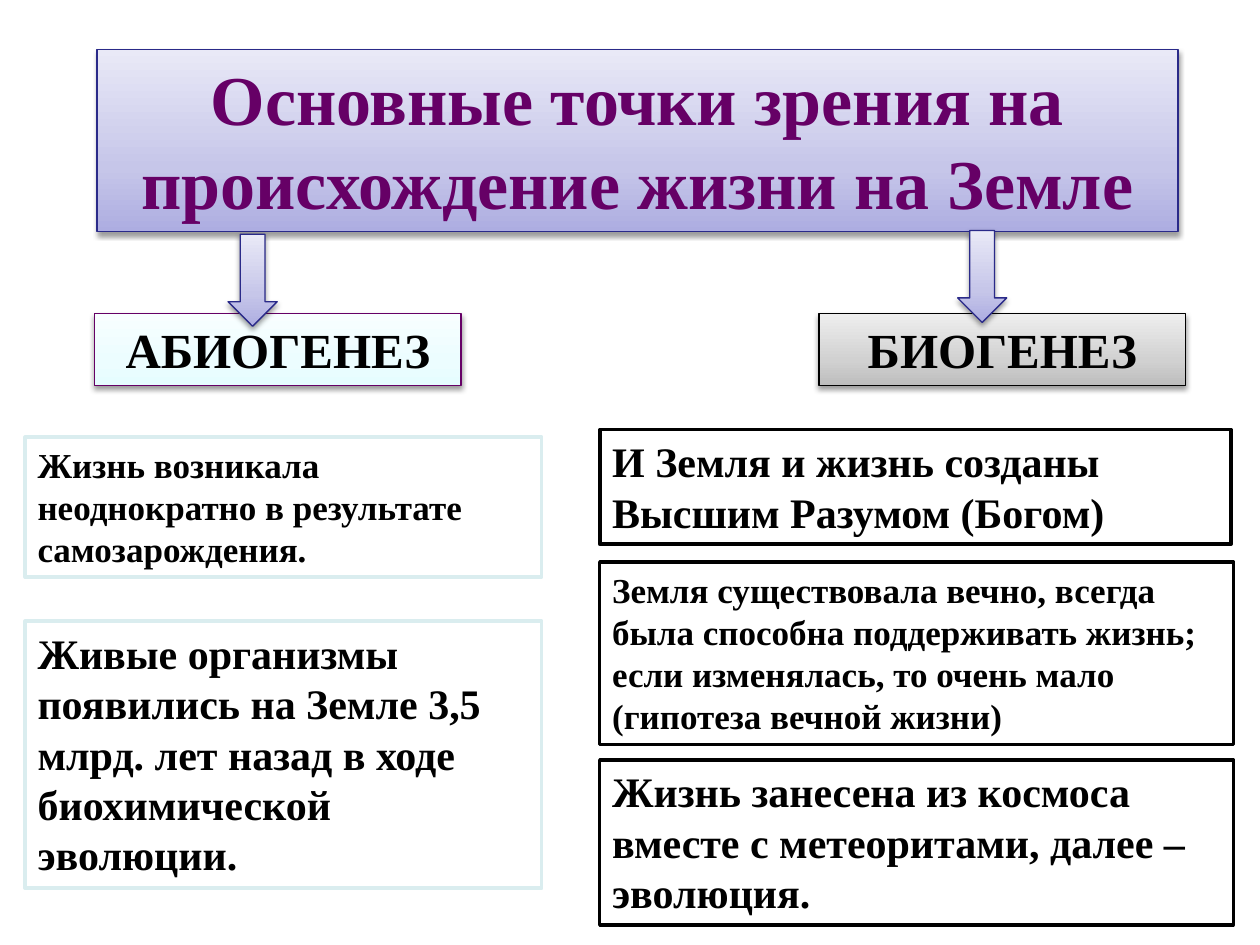
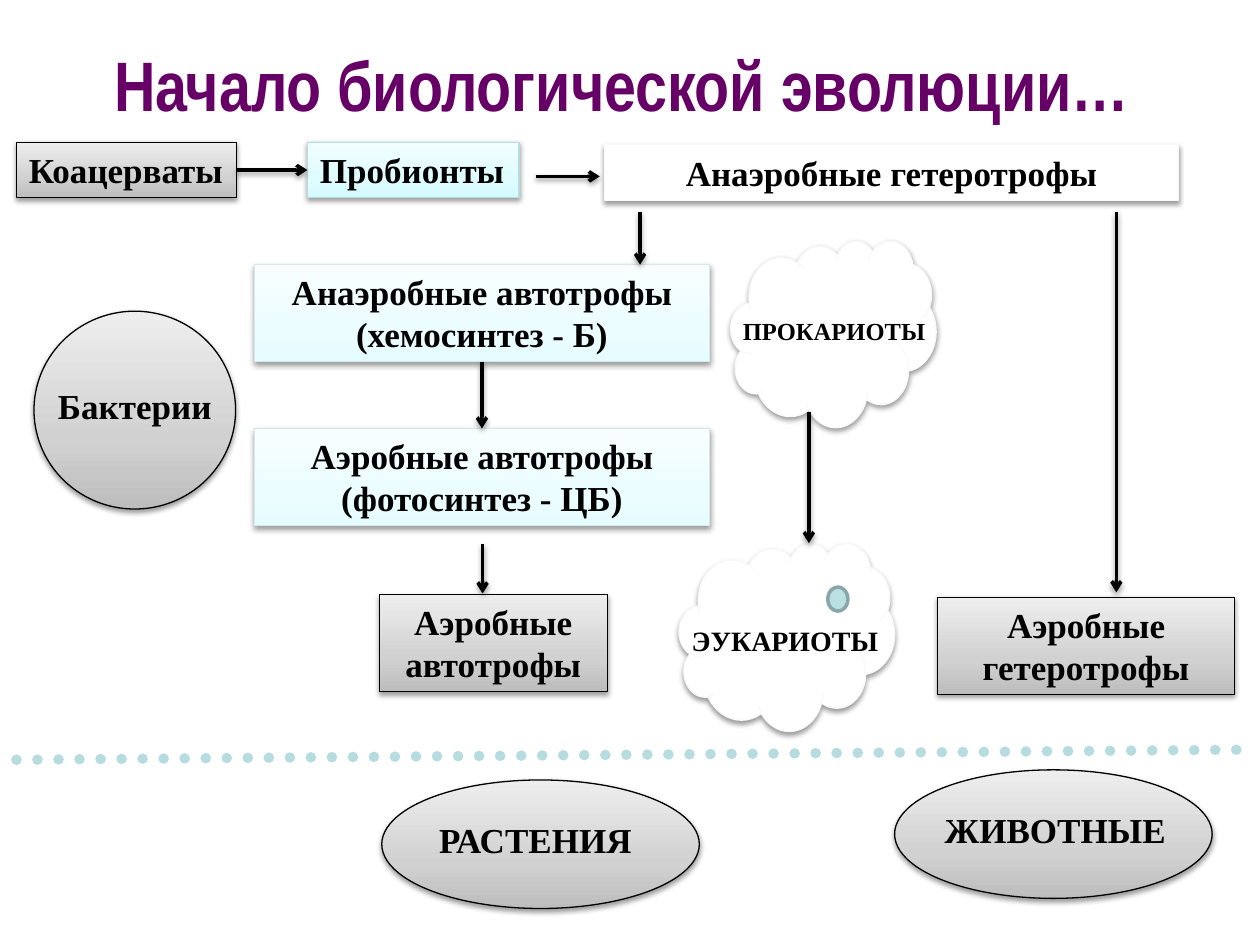
"""Build two slides on the origin of life and the start of biological evolution."""
from collections import namedtuple
from copy import deepcopy
from dataclasses import dataclass

from lxml.etree import SubElement
from pptx import Presentation
from pptx.dml.color import RGBColor
from pptx.enum.dml import MSO_LINE
from pptx.enum.shapes import MSO_CONNECTOR as CONN, MSO_SHAPE as SHAPE
from pptx.enum.text import MSO_ANCHOR as ANCHOR, MSO_AUTO_SIZE as AUTO, PP_ALIGN as ALIGN
from pptx.oxml.ns import qn
from pptx.util import Inches, Pt

Look = namedtuple("Look", "fill line width shadow", defaults=(0.75, True))
BOTTOM, LEFT, RIGHT, TOP = 2, 1, 3, 0


@dataclass(frozen=True)
class Theme:
    body_font: str = "Times New Roman"
    title_font: str = "Arial Narrow"
    ink: str = "000000"
    purple: str = "660066"
    teal: str = "B6DCDF"
    title: int = 40
    heading: int = 28
    large: int = 24
    body: int = 20
    small: int = 16
    tiny: int = 14
    stops: tuple = (0, 0.35, 1)
    violet: Look = Look(("ADADE1", "C6C6E9", "E9E9F7"), "2A2A89")
    grey: Look = Look(("BDBDBD", "D1D1D1", "EEEEEE"), "000000")
    ice: Look = Look(("E6FDFF", "ECFDFF", "F8FEFF"), "D5E8EA")
    ice_purple: Look = Look(("E6FDFF", "ECFDFF", "F8FEFF"), "660066")
    aqua: Look = Look(("D3FBFF", "DFFCFF", "F2FEFF"), "B6DCDF")
    white: Look = Look(("FFFFFF",), "F9F9F9")
    black_frame: Look = Look(("FFFFFF",), "000000", 2, False)
    pale_frame: Look = Look(("FFFFFF",), "DAEDEF", 2, False)
    nucleus: Look = Look(("BBE0E3",), "8AA6A8", 2, False)


THEME = Theme()


def rgb(value):
    return RGBColor.from_string(value)


def write(sp, text, size=THEME.body, color=THEME.ink, font=THEME.body_font,
          align=ALIGN.CENTER, wrap=True):
    tf = sp.text_frame
    tf.word_wrap = wrap
    tf.auto_size = AUTO.SHAPE_TO_FIT_TEXT
    tf.vertical_anchor = ANCHOR.TOP
    for i, line in enumerate(text.split("\n")):
        p = tf.paragraphs[0] if i == 0 else tf.add_paragraph()
        p.alignment = align
        r = p.add_run()
        r.text = line
        r.font.size = Pt(size)
        r.font.name = font
        r.font.bold = True
        r.font.color.rgb = rgb(color)


def cast_shadow(effects):
    shadow = SubElement(effects, qn("a:outerShdw"), blurRad=str(Pt(3.1)),
                        dist=str(Pt(1.6)), dir="5400000", rotWithShape="0")
    color = SubElement(shadow, qn("a:srgbClr"), val=THEME.ink)
    SubElement(color, qn("a:alpha"), val="38000")


def paint(fill, colors):
    if len(colors) == 1:
        fill.solid()
        fill.fore_color.rgb = rgb(colors[0])
        return
    fill.gradient()
    fill.gradient_angle = 90
    return colors


class Deck:
    """Hold the theme and current slide and draw each kind of element."""

    def __init__(self, theme):
        self.theme = theme
        self.prs = Presentation()
        self.prs.slide_width, self.prs.slide_height = Inches(10), Inches(7.5)

    def new_slide(self):
        self.slide = self.prs.slides.add_slide(self.prs.slide_layouts[6])
        self.shapes = self.slide.shapes

    def shape(self, kind, at, look, shapes=None):
        sp = (shapes or self.shapes).add_shape(kind, *map(Inches, at))
        if paint(sp.fill, look.fill):
            stops = sp.element.spPr.find(".//" + qn("a:gsLst"))
            stops.append(deepcopy(stops[-1]))
            for stop, position, color in zip(sp.fill.gradient_stops, self.theme.stops, look.fill):
                stop.position = position
                stop.color.rgb = rgb(color)
        sp.line.color.rgb = rgb(look.line)
        sp.line.width = Pt(look.width)
        sp.shadow.inherit = False
        if look.shadow:
            cast_shadow(sp.element.spPr.find(qn("a:effectLst")))
        return sp

    def box(self, text, at, look, **fmt):
        sp = self.shape(SHAPE.RECTANGLE, at, look)
        write(sp, text, **fmt)
        return sp

    def label(self, text, at, shapes=None, **fmt):
        sp = (shapes or self.shapes).add_textbox(*map(Inches, at))
        write(sp, text, **fmt)

    def labelled(self, kind, at, look, text, text_at, **fmt):
        shapes = self.shapes.add_group_shape().shapes
        self.shape(kind, at, look, shapes)
        self.label(text, text_at, shapes, **fmt)

    def line(self, start, end, color, width):
        c = self.shapes.add_connector(CONN.STRAIGHT, *map(Inches, start + end))
        c.line.color.rgb = rgb(color)
        c.line.width = Pt(width)
        effects = SubElement(c.element.spPr, qn("a:effectLst"))
        return c, c.element.spPr.find(qn("a:ln")), effects

    def arrow(self, start, end, begin=None, finish=None):
        c, ln, effects = self.line(start, end, self.theme.ink, 2)
        SubElement(ln, qn("a:tailEnd"), type="arrow")
        cast_shadow(effects)
        if begin:
            c.begin_connect(*begin)
        if finish:
            c.end_connect(*finish)

    def dotted(self, start, end):
        c, ln, _ = self.line(start, end, self.theme.teal, 6)
        c.line.dash_style = MSO_LINE.ROUND_DOT
        ln.set("cap", "rnd")


def viewpoints(deck):
    t = deck.theme
    deck.new_slide()
    deck.box("Основные точки зрения на происхождение жизни на Земле",
             (0.77, 0.39, 8.58, 1.45), t.violet, size=t.title, color=t.purple)
    for name, x, look in (("АБИОГЕНЕЗ", 0.75, t.ice_purple), ("БИОГЕНЕЗ", 6.5, t.grey)):
        deck.box(name, (x, 2.49, 2.91, 0.57), look, size=t.heading)
    for x, y in ((1.81, 1.86), (7.6, 1.83)):
        deck.shape(SHAPE.DOWN_ARROW, (x, y, 0.39, 0.73), t.violet)

    abiogenesis = (
        ("Жизнь возникала неоднократно в результате самозарождения.", 3.47, 4.1, 1.11, t.body),
        ("Живые организмы появились на Земле 3,5 млрд. лет назад в ходе биохимической эволюции.",
         4.93, 4.1, 2.12, t.large),
    )
    biogenesis = (
        ("И Земля и жизнь созданы Высшим Разумом (Богом)", 3.41, 5.01, 0.91, t.large),
        ("Земля существовала вечно, всегда была способна поддерживать жизнь; "
         "если изменялась, то очень мало (гипотеза вечной жизни)", 4.46, 5.03, 1.45, t.body),
        ("Жизнь занесена из космоса вместе с метеоритами, далее – эволюция.",
         6.03, 5.03, 1.31, t.large),
    )
    for x, look, views in ((0.2, t.pale_frame, abiogenesis), (4.76, t.black_frame, biogenesis)):
        for text, y, w, h, size in views:
            deck.box(text, (x, y, w, h), look, size=size, align=ALIGN.LEFT)


def evolution(deck):
    t = deck.theme
    deck.new_slide()
    deck.label("Начало биологической эволюции…", (0.32, 0.28, 9.23, 0.77),
               size=t.title, color=t.purple, font=t.title_font)

    coacervates = deck.box("Коацерваты", (0.13, 1.13, 1.75, 0.44), t.grey,
                           align=ALIGN.LEFT, wrap=False)
    probionts = deck.box("Пробионты", (2.44, 1.13, 1.68, 0.44), t.aqua,
                         align=ALIGN.LEFT, wrap=False)
    deck.box("Анаэробные гетеротрофы", (4.8, 1.15, 4.55, 0.44), t.white)
    chemo = deck.box("Анаэробные автотрофы\n(хемосинтез - Б)", (2.02, 2.1, 3.61, 0.77), t.ice)
    photo = deck.box("Аэробные автотрофы\n(фотосинтез - ЦБ)", (2.02, 3.4, 3.61, 0.77), t.ice)
    deck.box("Аэробные\nавтотрофы", (3.01, 4.72, 1.81, 0.77), t.grey)
    deck.box("Аэробные\nгетеротрофы", (7.44, 4.74, 2.36, 0.77), t.grey)

    deck.labelled(SHAPE.CLOUD, (5.8, 1.91, 1.63, 1.48), t.white,
                  "ПРОКАРИОТЫ", (5.79, 2.46, 1.66, 0.34), size=t.tiny, wrap=False)
    deck.labelled(SHAPE.CLOUD, (5.39, 4.31, 1.71, 1.49), t.white,
                  "ЭУКАРИОТЫ", (5.38, 4.9, 1.7, 0.37), size=t.small, wrap=False)
    deck.shape(SHAPE.OVAL, (6.57, 4.66, 0.16, 0.19), t.nucleus)

    deck.arrow((1.88, 1.35), (2.44, 1.35), (coacervates, RIGHT), (probionts, LEFT))
    deck.arrow((3.83, 2.87), (3.83, 3.4), (chemo, BOTTOM), (photo, TOP))
    deck.arrow((4.25, 1.4), (4.76, 1.4))
    for x, top, bottom in ((5.08, 1.68, 2.1), (6.42, 3.27, 4.31),
                           (8.86, 1.68, 4.7), (3.83, 4.32, 4.71)):
        deck.arrow((x, top), (x, bottom))

    for text, at, text_at in (
        ("РАСТЕНИЯ", (3.03, 6.19, 2.52, 1.02), (3.38, 6.45, 1.74, 0.44)),
        ("ЖИВОТНЫЕ", (7.1, 6.11, 2.52, 1.02), (7.39, 6.37, 1.97, 0.44)),
    ):
        deck.labelled(SHAPE.OVAL, at, t.grey, text, text_at, wrap=False)
    deck.labelled(SHAPE.OVAL, (0.27, 2.47, 1.6, 1.57), t.grey,
                  "Бактерии", (0.27, 3, 1.6, 0.44))
    deck.dotted((0.13, 6.03), (9.86, 5.95))


def main():
    deck = Deck(THEME)
    viewpoints(deck)
    evolution(deck)
    deck.prs.save("out.pptx")


if __name__ == "__main__":
    main()
